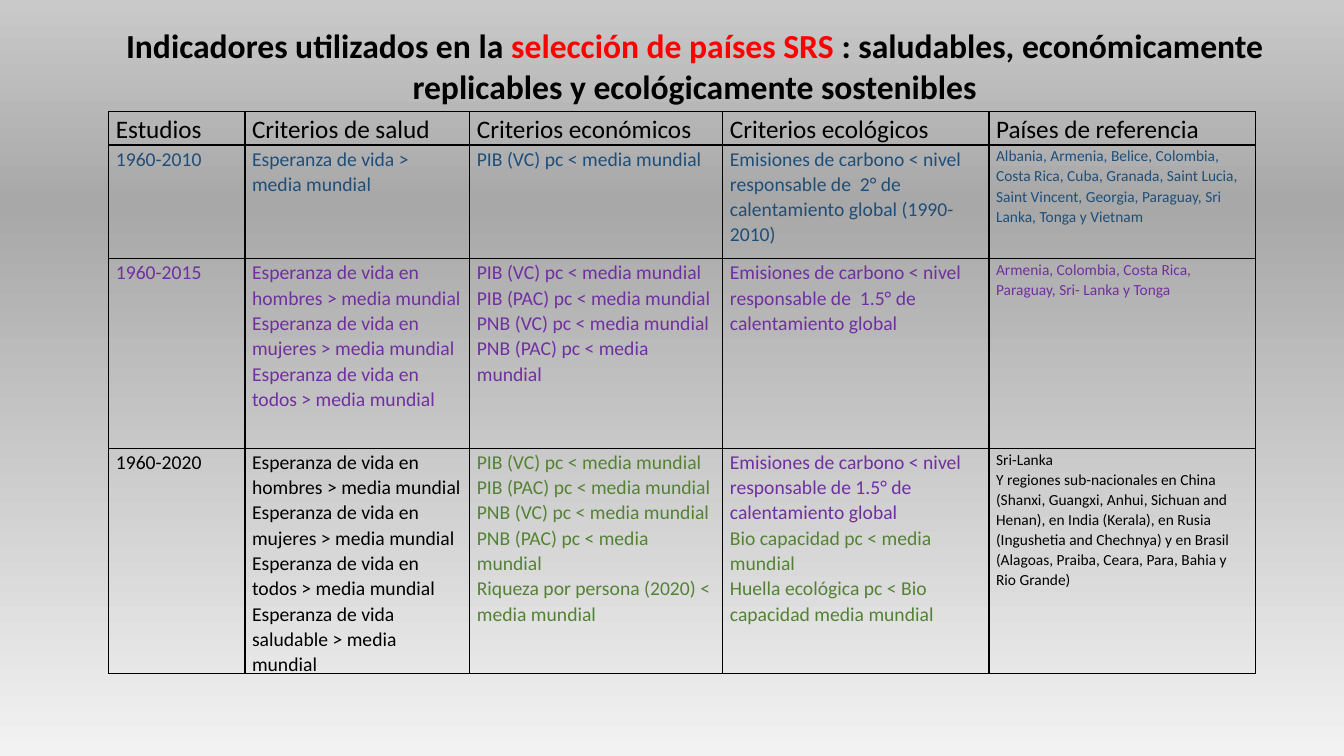
from copy import deepcopy
from dataclasses import dataclass

from lxml.etree import SubElement
from pptx import Presentation
from pptx.dml.color import RGBColor
from pptx.enum.text import MSO_AUTO_SIZE, PP_ALIGN
from pptx.oxml.ns import qn
from pptx.util import Inches, Pt


@dataclass(frozen=True)
class Theme:
    font: str = "Calibri"
    title: int = 24
    head: int = 18
    body: int = 14
    small: int = 11
    black: str = "000000"
    red: str = "FF0000"
    blue: str = "1F4E79"
    purple: str = "7030A0"
    green: str = "548235"
    back: tuple = ((0, "F2F2F2"), (0.73, "A8A8A8"), (1, "C9C9C9"))


class Deck:
    def __init__(self, theme):
        self.theme = theme
        self.prs = Presentation()
        self.prs.slide_width = Inches(13.33)
        self.prs.slide_height = Inches(7.5)
        self.slide = self.prs.slides.add_slide(self.prs.slide_layouts[6])

    def back(self):
        fill = self.slide.background.fill
        fill.gradient()
        fill.gradient_angle = 90
        stops = self.slide.element.find(".//" + qn("a:gsLst"))
        stops.append(deepcopy(stops[0]))
        for stop, (place, color) in zip(fill.gradient_stops, self.theme.back):
            stop.position = place
            stop.color.rgb = RGBColor.from_string(color)

    def run(self, para, text, size, color, bold=False):
        run = para.add_run()
        run.text = text
        style = {"name": self.theme.font, "size": Pt(size), "bold": bold}
        for key, value in style.items():
            setattr(run.font, key, value)
        run.font.color.rgb = RGBColor.from_string(color)

    def title(self, box, parts):
        frame = self.slide.shapes.add_textbox(*map(Inches, box)).text_frame
        frame.word_wrap = True
        frame.auto_size = MSO_AUTO_SIZE.SHAPE_TO_FIT_TEXT
        para = frame.paragraphs[0]
        para.alignment = PP_ALIGN.CENTER
        for text, color in parts:
            self.run(para, text, self.theme.title, color, True)

    def cell(self, cell, lines, size):
        style = {"margin_left": 0.07, "margin_right": 0.07,
                 "margin_top": 0.01, "margin_bottom": 0}
        for key, value in style.items():
            setattr(cell, key, Inches(value))
        # Borders come before the fill in the cell properties
        props = cell._tc.get_or_add_tcPr()
        for side in ("a:lnL", "a:lnR", "a:lnT", "a:lnB"):
            line = SubElement(props, qn(side), w=str(Pt(1)))
            solid = SubElement(line, qn("a:solidFill"))
            SubElement(solid, qn("a:srgbClr"), val=self.theme.black)
        cell.fill.background()
        frame = cell.text_frame
        for i, (text, color) in enumerate(lines):
            para = frame.add_paragraph() if i else frame.paragraphs[0]
            para.line_spacing = 1.06
            self.run(para, text, size, color)

    def table(self, box, widths, heights, rows):
        table = self.slide.shapes.add_table(
            len(rows), len(widths), *map(Inches, box)).table
        table.first_row = table.horz_banding = False
        for col, width in zip(table.columns, widths):
            col.width = Inches(width)
        for row, height in zip(table.rows, heights):
            row.height = Inches(height)
        last = len(widths) - 1
        for r, row in enumerate(rows):
            for c, lines in enumerate(row):
                size = self.theme.body
                if r == 0:
                    size = self.theme.head
                elif c == last:
                    size = self.theme.small
                self.cell(table.cell(r, c), lines, size)


def tint(color, *lines):
    return [(line, color) for line in lines]


def main():
    t = Theme()
    deck = Deck(t)
    deck.back()

    # Title
    deck.title((1, 0.2, 11.78, 0.91), [
        ("Indicadores utilizados en la ", t.black),
        ("selección de países SRS", t.red),
        (" : saludables, económicamente replicables y ecológicamente sostenibles", t.black),
    ])

    # Criteria shared by several studies
    life = [f"Esperanza de vida {who} > media mundial"
            for who in ("en hombres", "en mujeres", "en todos")]
    wealth = [f"{name} pc < media mundial"
              for name in ("PIB (VC)", "PIB (PAC)", "PNB (VC)", "PNB (PAC)")]
    carbon = "Emisiones de carbono < nivel responsable de {} de calentamiento global"

    # One row for each study
    heads = ("Estudios", "Criterios de salud", "Criterios económicos",
             "Criterios ecológicos", "Países de referencia")
    rows = [
        [tint(t.black, head) for head in heads],
        [
            tint(t.blue, "1960-2010"),
            tint(t.blue, "Esperanza de vida > media mundial"),
            tint(t.blue, wealth[0]),
            tint(t.blue, carbon.format(" 2°") + " (1990-2010)"),
            tint(t.blue, "Albania, Armenia, Belice, Colombia, Costa Rica, Cuba, "
                 "Granada, Saint Lucia, Saint Vincent, Georgia, Paraguay, "
                 "Sri Lanka, Tonga y Vietnam"),
        ],
        [
            tint(t.purple, "1960-2015"),
            tint(t.purple, *life),
            tint(t.purple, *wealth),
            tint(t.purple, carbon.format(" 1.5°")),
            tint(t.purple, "Armenia, Colombia, Costa Rica, Paraguay, Sri- Lanka y Tonga"),
        ],
        [
            tint(t.black, "1960-2020"),
            tint(t.black, *life, "Esperanza de vida saludable > media mundial"),
            tint(t.green, *wealth, "Riqueza por persona (2020) < media mundial"),
            tint(t.purple, carbon.format("1.5°"))
            + tint(t.green, "Bio capacidad pc < media mundial",
                   "Huella ecológica pc < Bio capacidad media mundial"),
            tint(t.black, "Sri-Lanka",
                 "Y regiones sub-nacionales en China (Shanxi, Guangxi, Anhui, "
                 "Sichuan and Henan), en India (Kerala), en Rusia (Ingushetia "
                 "and Chechnya) y en Brasil (Alagoas, Praiba, Ceara, Para, "
                 "Bahia y Rio Grande)"),
        ],
    ]
    deck.table((1.08, 1.11, 11.35, 5.58), (1.35, 2.23, 2.51, 2.64, 2.64),
               (0.31, 1.13, 1.88, 2.19), rows)
    deck.prs.save("out.pptx")


if __name__ == "__main__":
    main()
